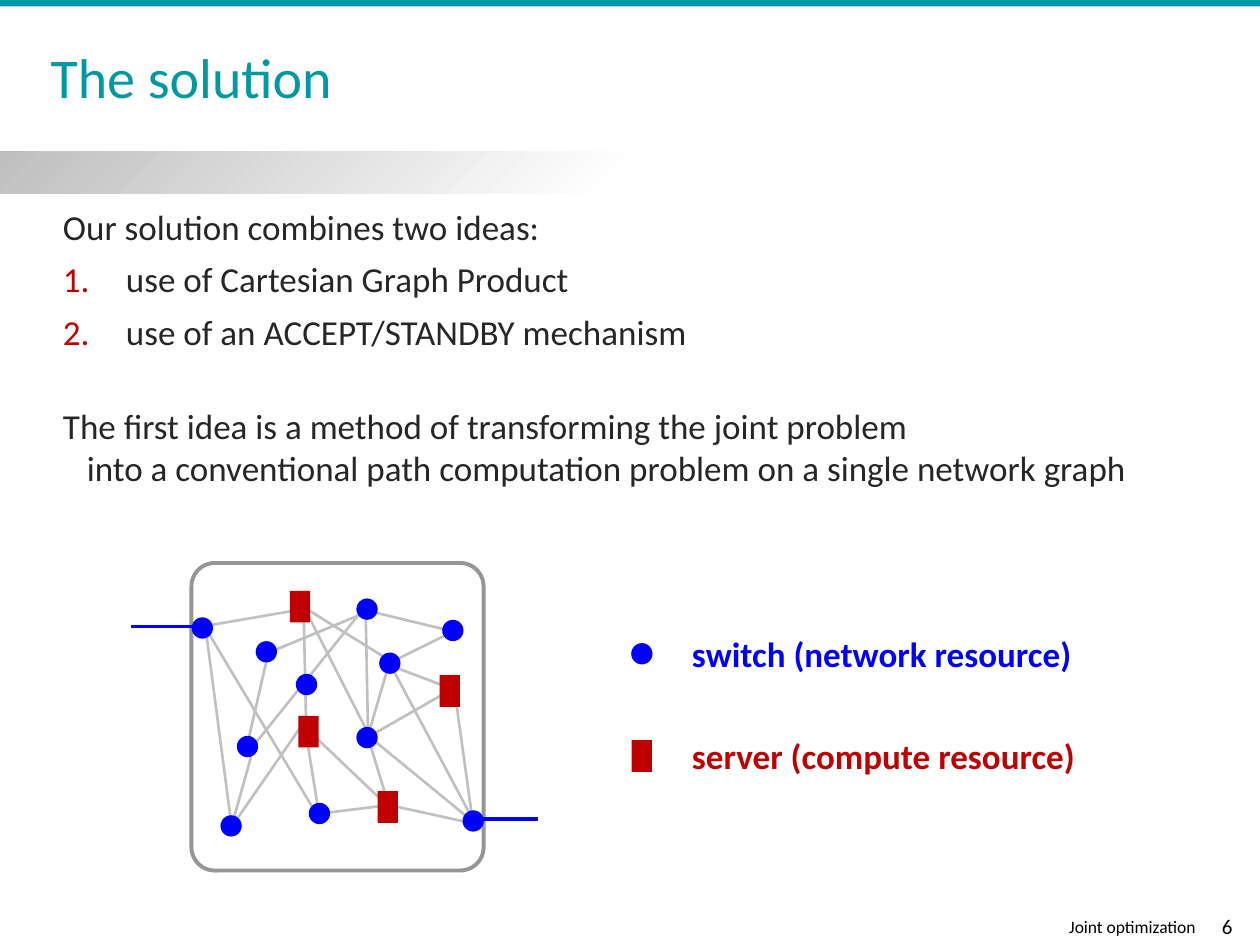
"""Build the slide that presents the solution and its network graph."""
import pptx
import pptx.dml.color
import pptx.enum.shapes
import pptx.enum.text
import pptx.oxml.ns
import pptx.util
from lxml import etree

Cm, Pt = pptx.util.Cm, pptx.util.Pt
SHAPE = pptx.enum.shapes.MSO_SHAPE
ANCHOR = pptx.enum.text.MSO_ANCHOR
ALIGN = pptx.enum.text.PP_ALIGN
qn = pptx.oxml.ns.qn

FONT = "Calibri"
TEAL, BLUE, RED, DARK, BLACK = "0098A1", "0000FF", "C00000", "262626", "000000"
WHITE, SILVER, EDGE, FRAME = "FFFFFF", "BFBFBF", "C0C0C0", "969696"

# text, space before (pt), left margin (cm), numbered
BODY = [
    ("Our solution combines two ideas:", 6, 0, False),
    ("use of Cartesian Graph Product", 6, 1.27, True),
    ("use of an ACCEPT/STANDBY mechanism", 6, 1.27, True),
    ("The first idea is a method of transforming the joint problem", 30, 0, False),
    ("into a conventional path computation problem on a single network graph", 0, 0.48, False),
]
EDGES = [
    [(4.8, 16.48), (6.17, 14.5), (6.12, 12.22), (7.42, 14.78), (7.37, 12.22),
     (5.13, 15.01), (4.67, 16.66), (4.14, 12.62), (6.17, 12.27), (7.85, 13.31)],
    [(4.98, 15.04), (5.41, 13.16), (7.44, 12.32), (9.14, 12.73), (7.8, 13.39),
     (9.12, 13.89), (7.42, 14.86), (7.85, 16.28), (6.15, 14.66), (6.43, 16.41)],
    [(9.19, 14.1), (9.53, 16.56), (7.42, 14.83), (7.85, 13.36), (9.58, 16.61),
     (7.85, 16.23), (6.38, 16.41), (4.09, 12.57)],
]
SWITCHES = [(4.08, 12.66), (5.37, 13.14), (4.99, 15.05), (4.66, 16.65), (7.4, 12.28),
            (9.13, 12.71), (7.86, 13.37), (7.4, 14.87), (6.44, 16.4), (9.54, 16.55),
            (6.18, 13.8)]
SERVERS = [(9.07, 13.93), (6.05, 12.23), (6.22, 14.75), (7.82, 16.27)]
LINKS = [(2.64, 3.96, 12.63), (9.5, 10.85, 16.51)]
SWITCH = (SHAPE.OVAL, 0.43, 0.43, BLUE)
SERVER = (SHAPE.RECTANGLE, 0.41, 0.64, RED)
LEGEND = [("switch (network resource)", SWITCH, 13.18),
          ("server (compute resource)", SERVER, 15.24)]


def rgb(color):
    return pptx.dml.color.RGBColor.from_string(color)


def style(sp, fill=None, line=None, width=0):
    sp.shadow.inherit = False
    if fill:
        sp.fill.solid()
        sp.fill.fore_color.rgb = rgb(fill)
    else:
        sp.fill.background()
    if line:
        sp.line.color.rgb = rgb(line)
        sp.line.width = Pt(width)
    else:
        sp.line.fill.background()


def add_shape(s, kind, x, y, w, h, fill, line=None, width=0):
    sp = s.shapes.add_shape(kind, Cm(x), Cm(y), Cm(w), Cm(h))
    style(sp, fill, line, width)
    return sp


def add_node(s, node, x, y):
    kind, w, h, color = node
    add_shape(s, kind, x - w / 2, y - h / 2, w, h, color)


def add_link(s, x1, x2, y):
    sp = s.shapes.add_connector(pptx.enum.shapes.MSO_CONNECTOR.STRAIGHT,
                                Cm(x1), Cm(y), Cm(x2), Cm(y))
    sp.line.color.rgb = rgb(BLUE)
    sp.line.width = Pt(2.25)
    etree.SubElement(sp._element.spPr, qn("a:effectLst"))


def format_text(p, size, color, bold=False):
    for r in p.runs:
        r.font.name, r.font.size, r.font.bold = FONT, Pt(size), bold
        r.font.color.rgb = rgb(color)


def add_box(s, x, y, w, h, anchor=ANCHOR.MIDDLE):
    tf = s.shapes.add_textbox(Cm(x), Cm(y), Cm(w), Cm(h)).text_frame
    tf.word_wrap = True
    tf.vertical_anchor = anchor
    tf.margin_left = tf.margin_right = tf.margin_top = tf.margin_bottom = 0
    return tf


def add_label(s, text, x, y, w, h, size, color, bold=False, align=ALIGN.LEFT):
    p = add_box(s, x, y, w, h).paragraphs[0]
    p.text = text
    p.alignment = align
    format_text(p, size, color, bold)
    return p


def indent(p, margin, numbered):
    pPr = p._p.get_or_add_pPr()
    pPr.set("marL", str(Cm(margin)))
    pPr.set("indent", str(-Cm(margin) if numbered else 0))
    if numbered:
        clr = etree.SubElement(pPr, qn("a:buClr"))
        etree.SubElement(clr, qn("a:srgbClr"), val=RED)
        etree.SubElement(pPr, qn("a:buFont"), typeface="+mj-lt")
        etree.SubElement(pPr, qn("a:buAutoNum"), type="arabicPeriod")


def add_body(s):
    tf = add_box(s, 1.27, 4.14, 22.94, 6.5, ANCHOR.TOP)
    for i, (text, before, margin, numbered) in enumerate(BODY):
        p = tf.add_paragraph() if i else tf.paragraphs[0]
        p.text = text
        p.space_before = Pt(before)
        indent(p, margin, numbered)
        format_text(p, 20, DARK)


def add_frame(s):
    add_shape(s, SHAPE.RECTANGLE, 0, 0, 25.4, 0.13, TEAL)
    band = add_shape(s, SHAPE.RECTANGLE, 0, 3.05, 25.4, 0.85, WHITE)
    band.fill.gradient()
    band.fill.gradient_angle = 315
    for stop, color, pos in zip(band.fill.gradient_stops, (SILVER, WHITE), (0, 0.5)):
        stop.color.rgb = rgb(color)
        stop.position = pos
    add_label(s, "The solution", 1.02, 0.56, 20.32, 2.18, 32, TEAL).line_spacing = 0.85
    add_label(s, "Joint optimization", 20.5, 18.34, 3.6, 0.69, 10, BLACK, align=ALIGN.RIGHT)
    add_label(s, "6", 24.23, 18.29, 1.02, 0.76, 12, BLACK, align=ALIGN.CENTER)


def add_network(s):
    box = add_shape(s, SHAPE.ROUNDED_RECTANGLE, 3.86, 11.35, 5.89, 6.2, WHITE, FRAME, 2.25)
    box.adjustments[0] = 0.08
    for points in EDGES:
        (x, y), *rest = [(Cm(px), Cm(py)) for px, py in points]
        fb = s.shapes.build_freeform(x, y)
        fb.add_line_segments(rest, close=False)
        style(fb.convert_to_shape(), line=EDGE, width=1.5)
    for link in LINKS:
        add_link(s, *link)
    for node, centers in ((SWITCH, SWITCHES), (SERVER, SERVERS)):
        for x, y in centers:
            add_node(s, node, x, y)


def add_legend(s):
    for text, node, y in LEGEND:
        add_node(s, node, 12.94, y)
        add_label(s, text, 13.95, y - 0.55, 8.5, 1.1, 20, node[-1], bold=True)


def main():
    prs = pptx.Presentation()
    prs.slide_width, prs.slide_height = Cm(25.4), Cm(19.05)
    s = prs.slides.add_slide(prs.slide_layouts[6])
    add_frame(s)
    add_body(s)
    add_network(s)
    add_legend(s)
    prs.save("out.pptx")


if __name__ == "__main__":
    main()
